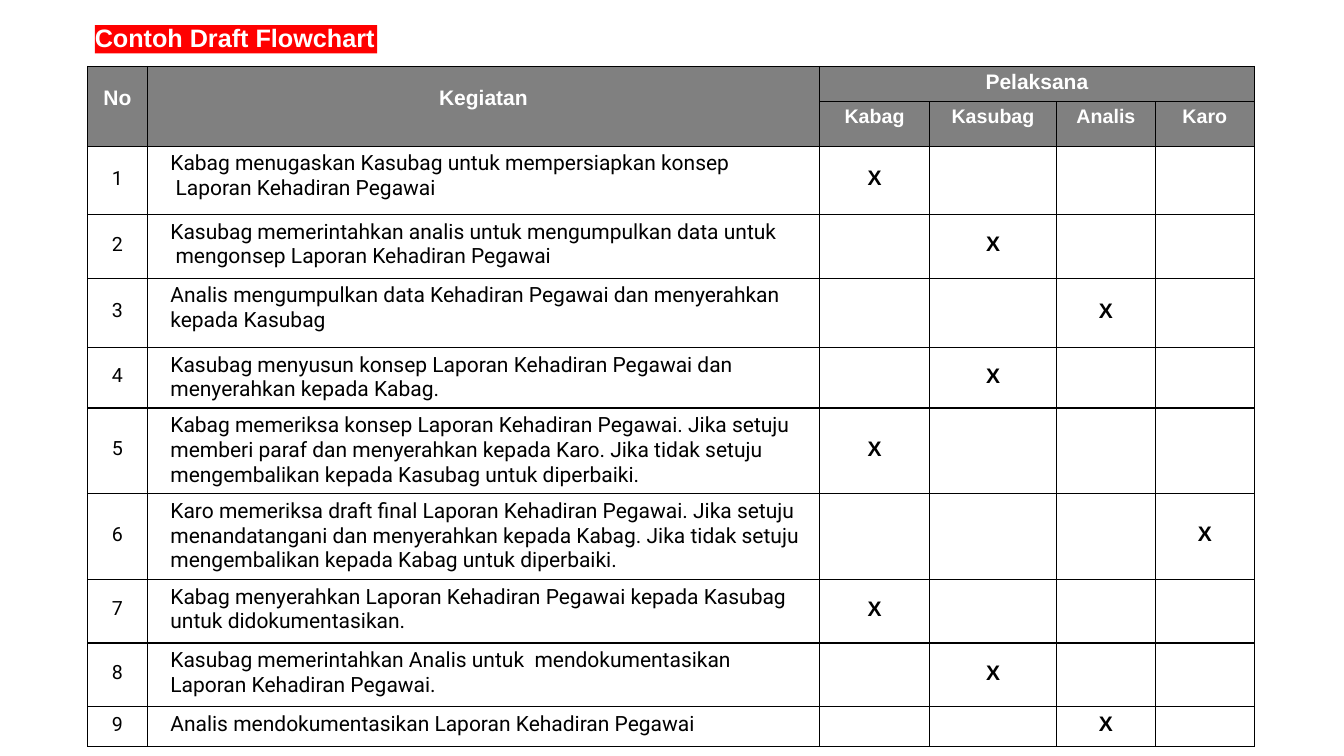
from dataclasses import dataclass

from lxml.etree import SubElement
from pptx import Presentation
from pptx.dml.color import RGBColor
from pptx.enum.shapes import MSO_SHAPE
from pptx.enum.text import MSO_ANCHOR, PP_ALIGN
from pptx.oxml.ns import qn
from pptx.util import Inches, Pt


@dataclass(frozen=True)
class Theme:
    black: str = "000000"
    white: str = "FFFFFF"
    header: str = "808080"
    accent: str = "FF0000"
    heading_font: str = "Arial"
    body_font: str = "Roboto"
    title: float = 18
    body: float = 15
    small: float = 14


THEME = Theme()
ROLES = ["Kabag", "Kasubag", "Analis", "Karo"]
ACTIVITIES = [
    (["Kabag menugaskan Kasubag untuk mempersiapkan konsep",
      " Laporan Kehadiran Pegawai"], "Kabag"),
    (["Kasubag memerintahkan analis untuk mengumpulkan data untuk",
      " mengonsep Laporan Kehadiran Pegawai"], "Kasubag"),
    (["Analis mengumpulkan data Kehadiran Pegawai dan menyerahkan "
      "kepada Kasubag"], "Analis"),
    (["Kasubag menyusun konsep Laporan Kehadiran Pegawai dan",
      "menyerahkan kepada Kabag."], "Kasubag"),
    (["Kabag memeriksa konsep Laporan Kehadiran Pegawai. Jika setuju "
      "memberi paraf dan menyerahkan kepada Karo. Jika tidak setuju "
      "mengembalikan kepada Kasubag untuk diperbaiki."], "Kabag"),
    (["Karo memeriksa draft final Laporan Kehadiran Pegawai. Jika setuju "
      "menandatangani dan menyerahkan kepada Kabag. Jika tidak setuju "
      "mengembalikan kepada Kabag untuk diperbaiki."], "Karo"),
    (["Kabag menyerahkan Laporan Kehadiran Pegawai kepada Kasubag "
      "untuk didokumentasikan."], "Kabag"),
    (["Kasubag memerintahkan Analis untuk  mendokumentasikan",
      "Laporan Kehadiran Pegawai."], "Kasubag"),
    (["Analis mendokumentasikan Laporan Kehadiran Pegawai"], "Analis"),
]
COLUMNS = [0.59, 6.67, 1.09, 1.26, 0.98, 0.98]
ROWS = [0.35, 0.44, 0.68, 0.63, 0.69, 0.6, 0.85, 0.85, 0.63, 0.63, 0.4]
HEADER_ROWS = 2
THICK_LINE_BELOW = 5


def add_text(p, text, size, font, color, bold=False):
    r = p.add_run()
    r.text = text
    r.font.size = Pt(size)
    r.font.name = font
    r.font.bold = bold
    r.font.color.rgb = RGBColor.from_string(color)


def add_title(s, parts):
    sp = s.shapes.add_shape(MSO_SHAPE.RECTANGLE, Inches(0.94), Inches(0.25),
                            Inches(2.8), Inches(0.28))
    sp.shadow.inherit = False
    sp.fill.solid()
    sp.fill.fore_color.rgb = RGBColor.from_string(THEME.accent)
    sp.line.fill.background()
    tf = sp.text_frame
    tf.word_wrap = True
    tf.vertical_anchor = MSO_ANCHOR.TOP
    tf.margin_left = tf.margin_top = tf.margin_right = tf.margin_bottom = 0
    p = tf.paragraphs[0]
    p.alignment = PP_ALIGN.LEFT
    p.line_spacing = Pt(19.7)
    for part in parts:
        add_text(p, part, THEME.title, THEME.heading_font, THEME.white, True)


def set_borders(cell, top, bottom):
    props = cell._tc.get_or_add_tcPr()
    widths = {"a:lnL": 1, "a:lnR": 1, "a:lnT": top, "a:lnB": bottom}
    for tag, width in widths.items():
        line = SubElement(props, qn(tag), w=str(Pt(width)))
        fill = SubElement(line, qn("a:solidFill"))
        SubElement(fill, qn("a:srgbClr"), val=THEME.black)


def style_cell(cell, row):
    cell.margin_left = cell.margin_right = 0
    cell.margin_top = cell.margin_bottom = 0
    set_borders(cell, 1.5 if row == THICK_LINE_BELOW + 1 else 1,
                1.5 if row == THICK_LINE_BELOW else 1)
    if row < HEADER_ROWS:
        cell.fill.solid()
        cell.fill.fore_color.rgb = RGBColor.from_string(THEME.header)
    else:
        cell.fill.background()


def fill_header(cell, text, size, top):
    cell.margin_top = Inches(top)
    p = cell.text_frame.paragraphs[0]
    p.alignment = PP_ALIGN.CENTER
    add_text(p, text, size, THEME.heading_font, THEME.white, True)


def fill_centered(cell, text, size, font, bold=False):
    cell.vertical_anchor = MSO_ANCHOR.MIDDLE
    cell.margin_bottom = Inches(0.04)
    p = cell.text_frame.paragraphs[0]
    p.alignment = PP_ALIGN.CENTER
    add_text(p, text, size, font, THEME.black, bold)


def fill_activity(cell, lines):
    cell.margin_left = Inches(0.23)
    cell.margin_top = Inches(0.05)
    tf = cell.text_frame
    for i, line in enumerate(lines):
        p = tf.add_paragraph() if i else tf.paragraphs[0]
        add_text(p, line, THEME.body, THEME.body_font, THEME.black)


def add_activity_table(s):
    frame = s.shapes.add_table(len(ROWS), len(COLUMNS), Inches(0.87),
                               Inches(0.66), Inches(sum(COLUMNS)),
                               Inches(sum(ROWS)))
    table = frame.table
    table.first_row = table.horz_banding = False
    for column, width in zip(table.columns, COLUMNS):
        column.width = Inches(width)
    for i, (row, height) in enumerate(zip(table.rows, ROWS)):
        row.height = Inches(height)
        for cell in row.cells:
            style_cell(cell, i)

    table.cell(0, 0).merge(table.cell(1, 0))
    table.cell(0, 1).merge(table.cell(1, 1))
    table.cell(0, 2).merge(table.cell(0, 5))
    for col, (text, top) in enumerate(
            [("No", 0.2), ("Kegiatan", 0.2), ("Pelaksana", 0.04)]):
        fill_header(table.cell(0, col), text, THEME.body, top)
    for col, role in enumerate(ROLES, 2):
        fill_header(table.cell(1, col), role, THEME.small, 0.04)

    for number, (lines, role) in enumerate(ACTIVITIES, 1):
        row = number + HEADER_ROWS - 1
        fill_centered(table.cell(row, 0), str(number), THEME.small,
                      THEME.body_font)
        fill_activity(table.cell(row, 1), lines)
        fill_centered(table.cell(row, 2 + ROLES.index(role)), "X", THEME.body,
                      THEME.heading_font, True)


def main():
    prs = Presentation()
    prs.slide_width = Inches(13.33)
    prs.slide_height = Inches(7.5)
    s = prs.slides.add_slide(prs.slide_layouts[6])
    add_activity_table(s)
    add_title(s, ["Contoh Draft ", "Flowchart"])
    prs.save("out.pptx")


if __name__ == "__main__":
    main()
